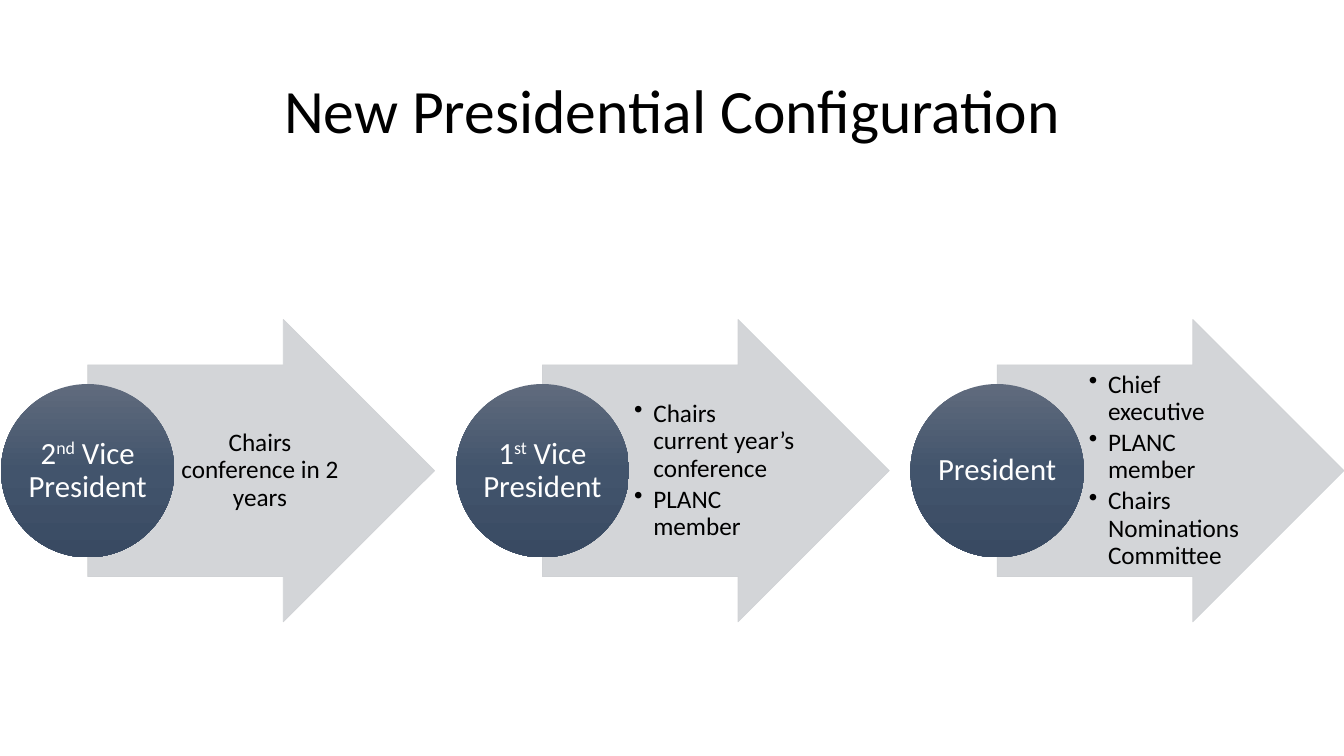
from copy import deepcopy

from pptx import Presentation
from pptx.dml.color import RGBColor
from pptx.enum.shapes import MSO_SHAPE as Shape
from pptx.enum.text import MSO_ANCHOR as Anchor, PP_ALIGN as Align
from pptx.oxml.ns import qn
from pptx.util import Inches, Pt
from lxml.etree import SubElement

WIDTH, HEIGHT = 13.33, 7.5
FONT = "Calibri"
BLACK = RGBColor(0x00, 0x00, 0x00)
WHITE = RGBColor(0xFF, 0xFF, 0xFF)
ARROW_GRAY = RGBColor(0xCF, 0xD1, 0xD4)
CIRCLE_BLUES = [
    (0, RGBColor(0x60, 0x6B, 0x7D)),
    (0.5, RGBColor(0x42, 0x54, 0x6C)),
    (1, RGBColor(0x39, 0x4A, 0x62)),
]

# Stage grid: three equal steps, each one arrow with a circle on its tail
STAGE_LEFT, STAGE_STEP = 0.01, 4.51
STAGE_TOP, STAGE_WIDTH, STAGE_HEIGHT = 3.17, 4.3, 3
SHAFT = 0.7       # share of the arrow's height
HEAD = 0.5        # arrowhead length as a share of its height
INDENT = 0.19

# Circle label as (text, is superscript) runs, then the duties in the arrow
STAGES = [
    ([("2", False), ("nd", True), (" Vice President", False)],
     ["Chairs conference in 2 years"]),
    ([("1", False), ("st", True), (" Vice President", False)],
     ["Chairs current year’s conference", "PLANC member"]),
    ([("President", False)],
     ["Chief executive", "PLANC member", "Chairs Nominations Committee"]),
]


def add_text(page, box, paras, size, color, insets, after=0, bulleted=False):
    """Place a middle-anchored text box; each paragraph is a list of runs."""
    frame = page.shapes.add_textbox(*map(Inches, box)).text_frame
    frame.word_wrap = True
    frame.vertical_anchor = Anchor.MIDDLE
    (frame.margin_left, frame.margin_top,
     frame.margin_right, frame.margin_bottom) = map(Inches, insets)
    for index, runs in enumerate(paras):
        para = frame.add_paragraph() if index else frame.paragraphs[0]
        para.alignment = Align.LEFT if bulleted else Align.CENTER
        para.line_spacing = 0.9
        para.space_after = Pt(after * size)
        if bulleted:
            add_bullet(para)
        for text, raised in runs:
            span = para.add_run()
            span.text = text
            span.font.name, span.font.size = FONT, Pt(size)
            span.font.color.rgb = color
            if raised:
                span.font._element.set("baseline", "30000")


def add_bullet(para):
    props = para._p.get_or_add_pPr()
    props.set("marL", str(Inches(INDENT)))
    props.set("indent", str(-Inches(INDENT)))
    SubElement(props, qn("a:buChar"), char="•")


def add_arrow(page, box):
    arrow = page.shapes.add_shape(Shape.RIGHT_ARROW, *map(Inches, box))
    arrow.shadow.inherit = False
    arrow.adjustments[0], arrow.adjustments[1] = SHAFT, HEAD
    arrow.line.width = Pt(0.5)
    for fill in (arrow.fill, arrow.line.fill):
        fill.solid()
        fill.fore_color.rgb = ARROW_GRAY
    for color in arrow._element.spPr.iter(qn("a:srgbClr")):
        SubElement(color, qn("a:alpha"), val="90000")


def add_circle(page, box):
    circle = page.shapes.add_shape(Shape.OVAL, *map(Inches, box))
    circle.shadow.inherit = False
    circle.line.fill.background()
    circle.fill.gradient()
    circle.fill.gradient_angle = 270
    stop_list = circle._element.spPr.find(".//" + qn("a:gsLst"))
    stop_list.append(deepcopy(stop_list[0]))
    for stop, (position, color) in zip(circle.fill.gradient_stops, CIRCLE_BLUES):
        stop.position = position
        stop.color.rgb = color


def add_title(page, box):
    add_text(page, box, [[("New Presidential Configuration", False)]],
             44, BLACK, (0.1, 0.05, 0.1, 0.05))


def add_stage(page, box, label, duties):
    left, top, width, height = box
    diameter = width * 0.4
    radius = diameter / 2
    middle = top + height / 2

    # Arrow, starting at the circle's centre
    add_arrow(page, (left + radius, top, width - radius, height))

    # Duties, inside the arrow's shaft
    shaft = height * SHAFT
    add_text(page, (left + diameter, middle - shaft / 2, width * 0.39, shaft),
             [[(duty, False)] for duty in duties], 18, BLACK,
             (0.05, 0.01, 0.03, 0.01),
             after=0.15, bulleted=len(duties) > 1)

    # Circle, with its label in the inscribed square
    add_circle(page, (left, middle - radius, diameter, diameter))
    side = diameter / 2 ** 0.5
    add_text(page, (left + radius - side / 2, middle - side / 2, side, side),
             [label], 22, WHITE, (0.02,) * 4, after=0.35)


def main():
    deck = Presentation()
    deck.slide_width, deck.slide_height = Inches(WIDTH), Inches(HEIGHT)
    page = deck.slides.add_slide(deck.slide_layouts[6])

    add_title(page, (0.92, 0.4, 11.5, 1.45))
    for column, (label, duties) in enumerate(STAGES):
        box = (STAGE_LEFT + column * STAGE_STEP, STAGE_TOP,
               STAGE_WIDTH, STAGE_HEIGHT)
        add_stage(page, box, label, duties)

    deck.save("out.pptx")


if __name__ == "__main__":
    main()
